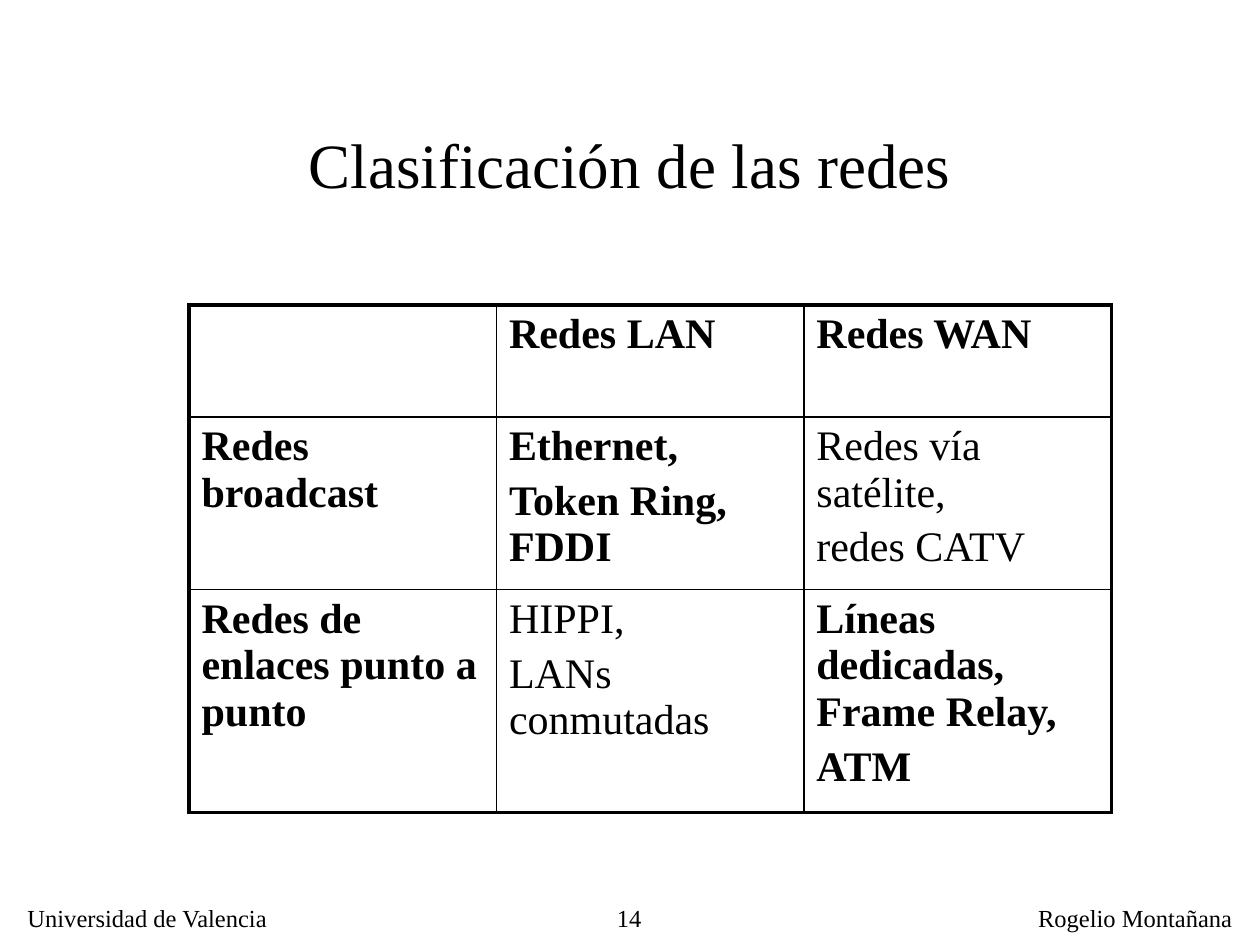
import pptx
import pptx.dml.color
import pptx.enum.text
import pptx.oxml
import pptx.oxml.ns
import pptx.util
from lxml import etree

BLACK = pptx.dml.color.RGBColor(0, 0, 0)
WHITE = pptx.dml.color.RGBColor(255, 255, 255)
FONT = "Times New Roman"
ALIGN = pptx.enum.text.PP_ALIGN
Inches, Pt = pptx.util.Inches, pptx.util.Pt


def style(paragraph, size, bold=False):
    font = paragraph.font
    font.name, font.size, font.bold = FONT, Pt(size), bold
    font.color.rgb = BLACK


def add_border(cell, side, width):
    """Draw one cell edge; side is L, R, T or B and must be added in that order."""
    line = etree.SubElement(cell._tc.get_or_add_tcPr(), pptx.oxml.ns.qn(f"a:ln{side}"),
                            w=str(Pt(width)))
    fill = etree.SubElement(line, pptx.oxml.ns.qn("a:solidFill"))
    etree.SubElement(fill, pptx.oxml.ns.qn("a:srgbClr"), val=str(BLACK))


deck = pptx.Presentation()
deck.slide_width, deck.slide_height = Inches(10), Inches(7.5)
slide = deck.slides.add_slide(deck.slide_layouts[5])

# Title
title = slide.shapes.title
title.left, title.top = Inches(0.75), Inches(0.67)
title.width, title.height = Inches(8.5), Inches(1.25)
title.text_frame.text = "Clasificación de las redes"
title.text_frame.vertical_anchor = pptx.enum.text.MSO_ANCHOR.MIDDLE
title.text_frame.paragraphs[0].alignment = ALIGN.CENTER
style(title.text_frame.paragraphs[0], 36)

# Footer: left, width, text, alignment
footer = [
    (0.12, 2.13, "Universidad de Valencia", ALIGN.LEFT, False),
    (4.13, 1.06, "14", ALIGN.RIGHT, True),
    (8.14, 1.74, "Rogelio Montañana", ALIGN.LEFT, False),
]
for left, width, text, alignment, wrap in footer:
    note = slide.shapes.add_textbox(Inches(left), Inches(7.12), Inches(width), Inches(0.33))
    note.text_frame.word_wrap = wrap
    note.text_frame.text = text
    note.text_frame.paragraphs[0].alignment = alignment
    style(note.text_frame.paragraphs[0], 14)

# Classification table: each cell is its text and whether it is bold
classification = [
    [("", True), ("Redes LAN", True), ("Redes WAN", True)],
    [("Redes broadcast", True), ("Ethernet,\nToken Ring, FDDI", True),
     ("Redes vía satélite,\nredes CATV", False)],
    [("Redes de enlaces punto a punto", True), ("HIPPI,\nLANs conmutadas", False),
     ("Líneas dedicadas, Frame Relay,\nATM", True)],
]
row_heights = [0.89, 1.37, 1.76]
column_width = 2.44
last = len(classification) - 1
table = slide.shapes.add_table(3, 3, Inches(1.5), Inches(2.42), Inches(3 * column_width),
                               Inches(sum(row_heights))).table
table.first_row = table.horz_banding = False
for column in table.columns:
    column.width = Inches(column_width)

for r, entries in enumerate(classification):
    table.rows[r].height = Inches(row_heights[r])
    for c, (text, bold) in enumerate(entries):
        cell = table.cell(r, c)
        cell.text_frame.text = text
        for index, paragraph in enumerate(cell.text_frame.paragraphs):
            style(paragraph, 24, bold)
            paragraph.space_before = Pt(4.8 if index else 0)
        outer = {"L": c == 0, "R": c == last, "T": r == 0, "B": r == last}
        for side, is_outer in outer.items():
            add_border(cell, side, 2.25 if is_outer else 1)
        cell.fill.solid()
        cell.fill.fore_color.rgb = WHITE

deck.save("out.pptx")
